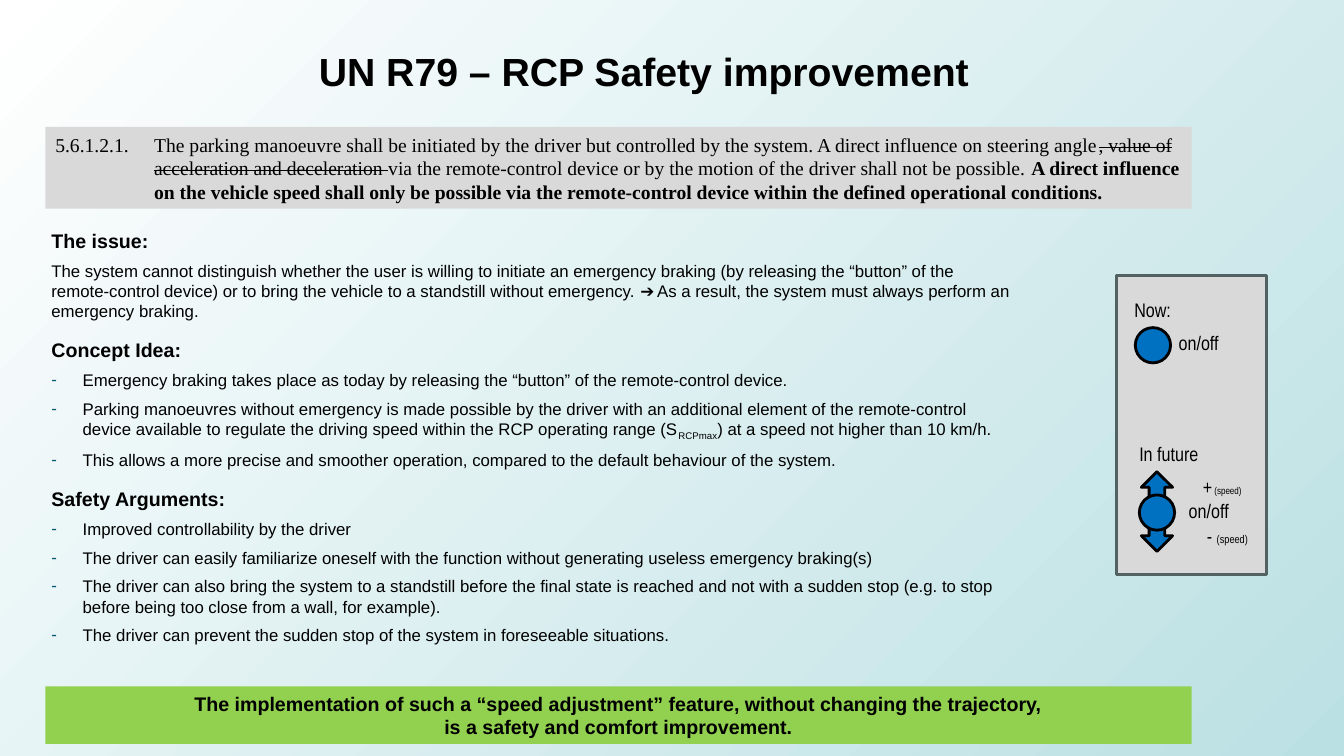
from pptx import Presentation
from pptx.dml.color import RGBColor
from pptx.enum import shapes, text
from pptx.oxml.ns import qn
from pptx.util import Inches, Pt
from lxml import etree

BLACK = RGBColor(0x00, 0x00, 0x00)
WHITE = RGBColor(0xFF, 0xFF, 0xFF)
AQUA = RGBColor(0xBB, 0xE0, 0xE3)
GREY = RGBColor(0xD9, 0xD9, 0xD9)
SLATE = RGBColor(0x52, 0x62, 0x63)
BLUE = RGBColor(0x00, 0x70, 0xC0)
GREEN = RGBColor(0x92, 0xD0, 0x50)
DASH = RGBColor(0x03, 0x59, 0x70)
SHAPE = shapes.MSO_SHAPE

HEADING, PLAIN, BULLET = "heading", "plain", "bullet"
BODY = [
    (HEADING, "The issue:"),
    (PLAIN, "The system cannot distinguish whether the user is willing to initiate an emergency braking "
            "(by releasing the “button” of the remote-control device) or to bring the vehicle to a standstill "
            "without emergency. ➔ As a result, the system must always perform an emergency braking."),
    (HEADING, "Concept Idea:"),
    (BULLET, "Emergency braking takes place as today by releasing the “button” of the remote-control device."),
    (BULLET, "Parking manoeuvres without emergency is made possible by the driver with an additional element "
             "of the remote-control device available to regulate the driving speed within the RCP operating "
             "range (S", "RCPmax", ") at a speed not higher than 10 km/h."),
    (BULLET, "This allows a more precise and smoother operation, compared to the default behaviour of the system."),
    (HEADING, "Safety Arguments:"),
    (BULLET, "Improved controllability by the driver"),
    (BULLET, "The driver can easily familiarize oneself with the function without generating useless "
             "emergency braking(s)"),
    (BULLET, "The driver can also bring the system to a standstill before the final state is reached and not "
             "with a sudden stop (e.g. to stop before being too close from a wall, for example)."),
    (BULLET, "The driver can prevent the sudden stop of the system in foreseeable situations."),
]
# Text, bold, struck through
RULE = [
    ("5.6.1.2.1.\tThe parking manoeuvre shall be initiated by the driver but controlled by the system. "
     "A direct influence on steering angle", False, False),
    (", value of acceleration and deceleration", False, True),
    (" ", True, True),
    ("via the remote-control device or by the motion of the driver shall not be possible. ", False, False),
    ("A direct influence on the vehicle speed shall only be possible via the remote-control device "
     "within the defined operational conditions.", True, False),
]
CLOSING = ["The implementation of such a “speed adjustment” feature, without changing the trajectory,",
           "is a safety and comfort improvement."]


def place(sp, x, y, w, h):
    sp.left, sp.top, sp.width, sp.height = Inches(x), Inches(y), Inches(w), Inches(h)


def style(r, size, font="Arial", bold=False):
    r.font.size, r.font.name, r.font.bold = Pt(size), font, bold
    r.font.color.rgb = BLACK


def add_run(p, content, *args, **kwargs):
    r = p.add_run()
    r.text = content
    style(r, *args, **kwargs)
    return r


def no_insets(tf):
    tf.margin_left = tf.margin_top = tf.margin_right = tf.margin_bottom = 0


def set_indent(p, hanging, bullet=None):
    pPr = p._p.get_or_add_pPr()
    pPr.set("marL", str(Inches(hanging)))
    pPr.set("indent", str(-Inches(hanging)))
    if bullet:
        color = etree.SubElement(pPr, qn("a:buClr"))
        etree.SubElement(color, qn("a:srgbClr")).set("val", str(DASH))
        etree.SubElement(pPr, qn("a:buChar")).set("char", bullet)
    else:
        etree.SubElement(pPr, qn("a:buNone"))


def add_shape(s, kind, box, fill, line=None):
    sp = s.shapes.add_shape(kind, *map(Inches, box))
    sp.shadow.inherit = False
    sp.fill.solid()
    sp.fill.fore_color.rgb = fill
    if line is None:
        sp.line.fill.background()
    else:
        sp.line.color.rgb = line
        sp.line.width = Pt(2)
    return sp


def add_title(s, *box):
    sp = s.shapes.title
    place(sp, *box)
    tf = sp.text_frame
    tf.text = "UN R79 – RCP Safety improvement"
    tf.vertical_anchor = text.MSO_ANCHOR.MIDDLE
    p = tf.paragraphs[0]
    p.alignment = text.PP_ALIGN.CENTER
    style(p.runs[0], 28, bold=True)


def add_rule(s, *box):
    tf = add_shape(s, SHAPE.RECTANGLE, box, GREY).text_frame
    tf.word_wrap = True
    p = tf.paragraphs[0]
    set_indent(p, 0.98)
    p.alignment = text.PP_ALIGN.LEFT
    for content, bold, struck in RULE:
        r = add_run(p, content, 14, "Times New Roman", bold)
        if struck:
            r._r.get_or_add_rPr().set("strike", "sngStrike")


def add_body(s, *box):
    sp = s.placeholders[1]
    place(sp, *box)
    tf = sp.text_frame
    no_insets(tf)
    tf.word_wrap = True
    tf.auto_size = text.MSO_AUTO_SIZE.NONE
    for i, (kind, *parts) in enumerate(BODY):
        p = tf.add_paragraph() if i else tf.paragraphs[0]
        set_indent(p, *((0.31, "-") if kind == BULLET else (0,)))
        heading = kind == HEADING
        p.space_before = Pt(0 if i == 0 else 12 if heading else 6)
        for j, part in enumerate(parts):
            r = add_run(p, part, 14 if heading else 12, bold=heading)
            if j == 1:  # subscript
                r._r.get_or_add_rPr().set("baseline", "-25000")


def add_remote(s, x, y, w, h):
    add_shape(s, SHAPE.RECTANGLE, (x, y, w, h), GREY, SLATE)

    def control(kind, dx, dy, cw, ch):
        add_shape(s, kind, (x + dx, y + dy, cw, ch), BLUE, BLACK)

    def label(dx, middle, content, note="", note_size=8):
        height = 0.24
        sp = s.shapes.add_textbox(*map(Inches, (x + dx, y + middle - height / 2, w - dx, height)))
        tf = sp.text_frame
        no_insets(tf)
        tf.word_wrap = True
        tf.vertical_anchor = text.MSO_ANCHOR.MIDDLE
        p = tf.paragraphs[0]
        add_run(p, content, 14, "Arial Narrow")
        if note:
            add_run(p, note, note_size, "Arial Narrow")

    # Present control
    label(0.18, 0.34, "Now:")
    control(SHAPE.OVAL, 0.19, 0.52, 0.35, 0.35)
    label(0.62, 0.67, "on/off")
    # Future control
    label(0.23, 1.77, "In future")
    control(SHAPE.UP_DOWN_ARROW, 0.25, 1.95, 0.31, 0.79)
    control(SHAPE.OVAL, 0.23, 2.18, 0.35, 0.35)
    label(0.86, 2.1, "+", " (speed)", 7)
    label(0.72, 2.34, "on/off")
    label(0.9, 2.58, "- ", "(speed)")


def add_closing(s, *box):
    tf = add_shape(s, SHAPE.RECTANGLE, box, GREEN).text_frame
    tf.word_wrap = True
    tf.text = "\n".join(CLOSING)
    for p in tf.paragraphs:
        p.alignment = text.PP_ALIGN.CENTER
        style(p.runs[0], 14, bold=True)


def add_background(s):
    fill = s.background.fill
    fill.gradient()
    fill.gradient_angle = 315
    for stop, color in zip(fill.gradient_stops, (WHITE, AQUA)):
        stop.color.rgb = color


def main():
    prs = Presentation()
    prs.slide_width, prs.slide_height = Inches(13.33), Inches(7.5)
    s = prs.slides.add_slide(prs.slide_layouts[1])
    add_background(s)
    add_title(s, 0.36, 0.3, 12.05, 0.81)
    add_rule(s, 0.45, 1.26, 11.37, 0.81)
    add_body(s, 0.51, 2.27, 9.54, 4.14)
    add_remote(s, 11.07, 2.73, 1.49, 2.97)
    add_closing(s, 0.45, 6.81, 11.37, 0.57)
    prs.save("out.pptx")


if __name__ == "__main__":
    main()
